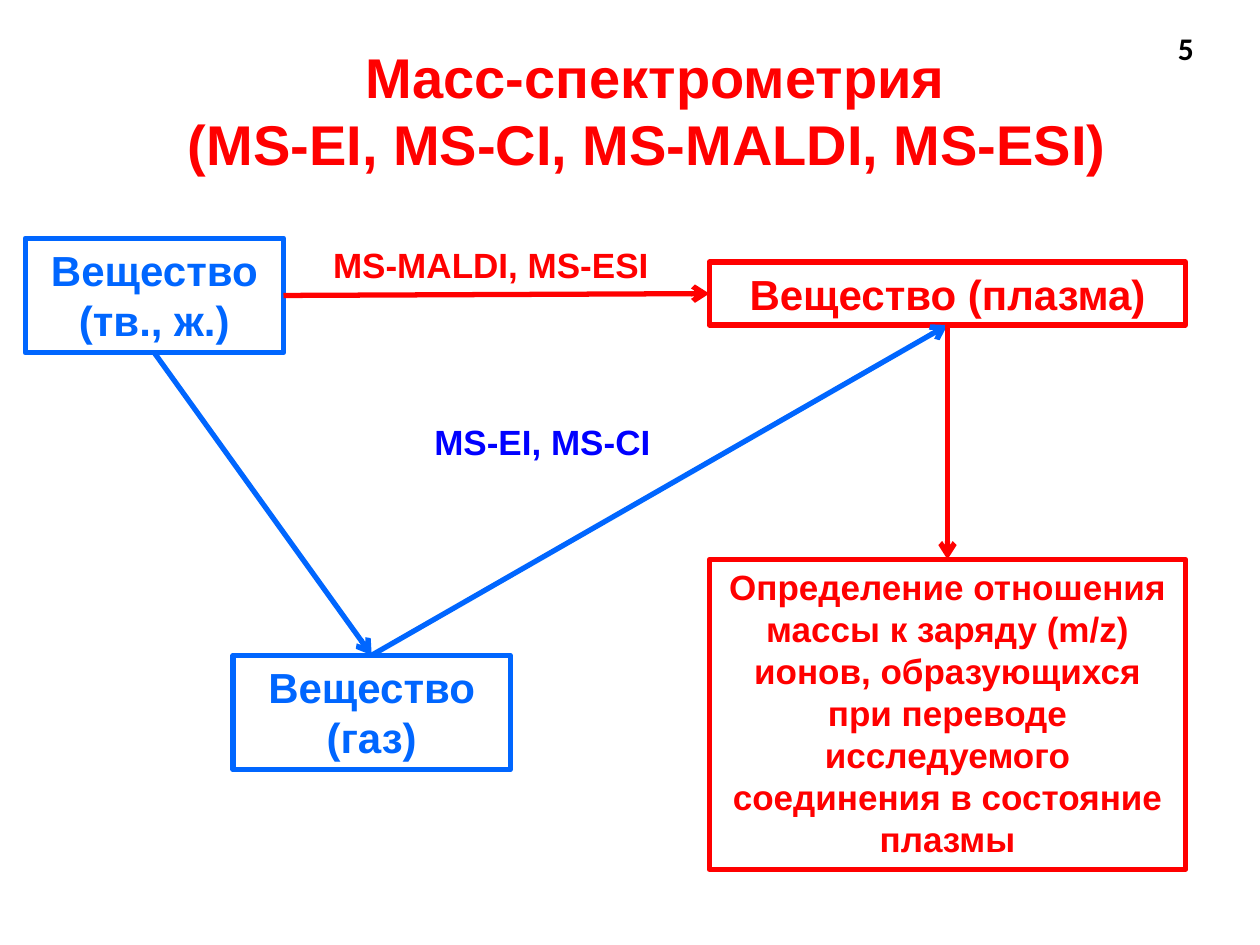
from collections import namedtuple
from lxml.etree import SubElement
from pptx import Presentation
from pptx.dml.color import RGBColor
from pptx.enum.shapes import MSO_CONNECTOR, MSO_SHAPE
from pptx.enum.text import MSO_ANCHOR, PP_ALIGN
from pptx.oxml.ns import qn
from pptx.util import Inches, Pt

COLUMNS, ROWS = 100, 75
RED, AZURE, BLUE, BLACK = "FF0000", "0066FF", "0000FF", "000000"
TOP, LEFT, BOTTOM, RIGHT = range(4)

Box = namedtuple("Box", "left top width height")


def color(value):
    return RGBColor.from_string(value)


def place(box, left, top, width, height):
    column, row = Inches(10) / COLUMNS, Inches(7.5) / ROWS
    return [
        round((box.left + left) * column),
        round((box.top + top) * row),
        round(width * column),
        round(height * row),
    ]


def write(shape, *lines, size=20, ink=RED, font="Arial", align=PP_ALIGN.CENTER, wrap=True):
    frame = shape.text_frame
    frame.word_wrap = wrap
    frame.vertical_anchor = MSO_ANCHOR.TOP
    for index, line in enumerate(lines):
        para = frame.add_paragraph() if index else frame.paragraphs[0]
        para.alignment = align
        span = para.add_run()
        span.text = line
        span.font.name = font
        span.font.size = Pt(size)
        span.font.bold = True
        span.font.color.rgb = color(ink)


def add_label(page, area, *lines, **style):
    write(page.shapes.add_textbox(*area), *lines, **style)


def add_stage(page, area, text, ink, size=24):
    stage = page.shapes.add_shape(MSO_SHAPE.RECTANGLE, *area)
    stage.shadow.inherit = False
    stage.fill.background()
    stage.line.color.rgb = color(ink)
    stage.line.width = Pt(3)
    write(stage, text, ink=ink, size=size)
    return stage


def add_arrow(page, start, start_side, end, end_side, ink):
    arrow = page.shapes.add_connector(MSO_CONNECTOR.STRAIGHT, 0, 0, 0, 0)
    arrow.begin_connect(start, start_side)
    arrow.end_connect(end, end_side)
    arrow.line.color.rgb = color(ink)
    arrow.line.width = Pt(3)
    SubElement(arrow.line._get_or_add_ln(), qn("a:tailEnd"), type="arrow")
    SubElement(arrow._element.spPr, qn("a:effectLst"))


def build_header(page, box):
    add_label(page, place(box, 13.8, 2.9, 76.4, 11.8),
              "Масс-спектрометрия", "(MS-EI, MS-CI, MS-MALDI, MS-ESI) ", size=32)
    add_label(page, place(box, 92.5, 1.8, 3.3, 4), "5",
              size=18, ink=BLACK, font="Calibri", align=PP_ALIGN.LEFT, wrap=False)


def build_scheme(page, box):
    solid = add_stage(page, place(box, 2, 0.9, 20.5, 9.1), "Вещество (тв., ж.)", AZURE)
    gas = add_stage(page, place(box, 18.5, 34, 22, 9.1), "Вещество (газ)", AZURE)
    plasma = add_stage(page, place(box, 56.3, 2.8, 37.8, 5), "Вещество (плазма)", RED)
    result = add_stage(
        page, place(box, 56.3, 26.4, 37.8, 24.6),
        "Определение отношения массы к заряду (m/z) ионов, образующихся "
        "при переводе исследуемого соединения в состояние плазмы", RED, size=20)

    for route in (
        (solid, BOTTOM, gas, TOP, AZURE),
        (gas, TOP, plasma, BOTTOM, AZURE),
        (solid, RIGHT, plasma, LEFT, RED),
        (plasma, BOTTOM, result, TOP, RED),
    ):
        add_arrow(page, *route)

    add_label(page, place(box, 24.7, 0.8, 28.5, 4.4), "MS-MALDI, MS-ESI")
    add_label(page, place(box, 32.7, 14.9, 20.7, 4.4), "MS-EI, MS-CI", ink=BLUE)


def main():
    deck = Presentation()
    deck.slide_width, deck.slide_height = Inches(10), Inches(7.5)
    page = deck.slides.add_slide(deck.slide_layouts[6])
    build_header(page, Box(0, 0, COLUMNS, 18))
    build_scheme(page, Box(0, 18, COLUMNS, ROWS - 18))
    deck.save("out.pptx")


if __name__ == "__main__":
    main()
